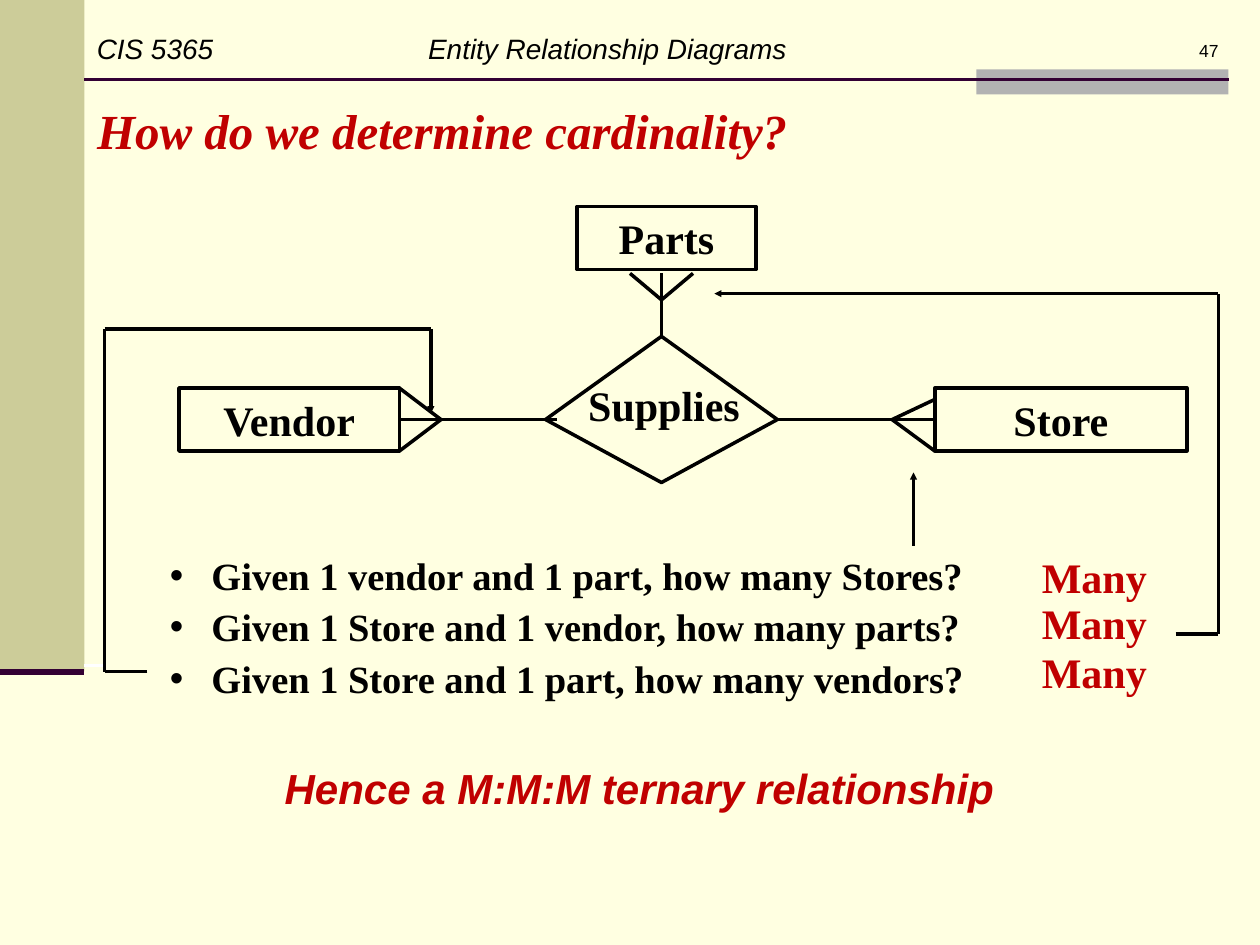
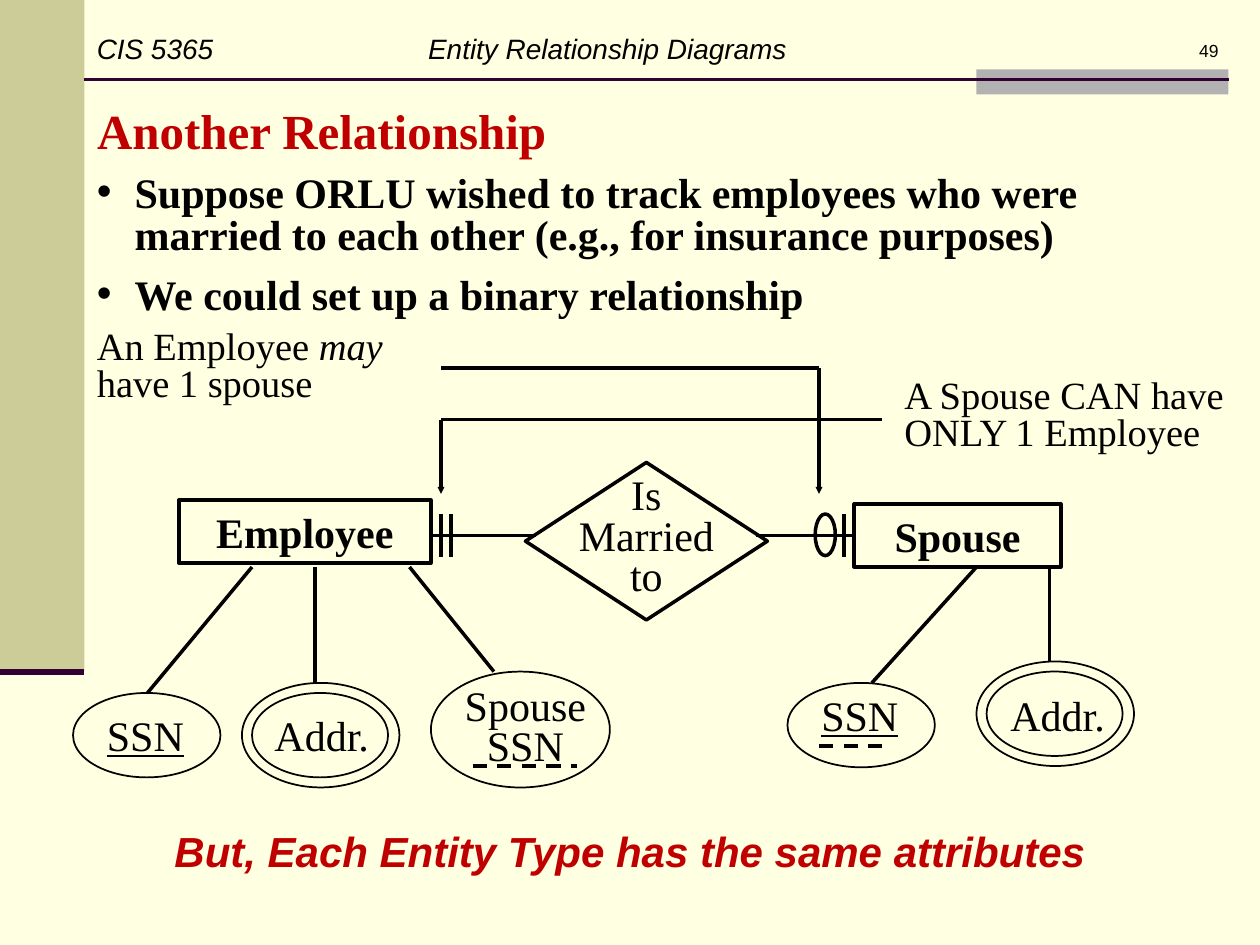
from itertools import pairwise

from lxml.etree import SubElement
from pptx import Presentation
from pptx.dml.color import RGBColor
from pptx.enum.dml import MSO_LINE
from pptx.enum.shapes import MSO_CONNECTOR, MSO_SHAPE
from pptx.enum.text import MSO_ANCHOR, MSO_AUTO_SIZE, PP_ALIGN
from pptx.oxml.ns import qn
from pptx.util import Inches, Pt

BLACK, RED, PLUM, WHITE = "000000", "C00000", "330033", "FFFFFF"
SERIF, SANS = "Times New Roman", "Arial"
ENTITY = {"name": SERIF, "size": Pt(24), "bold": True}
LABEL = {"name": SERIF, "size": Pt(24), "bold": False}
QUESTION = {"name": SERIF, "size": Pt(22), "bold": True}
NOTE = {"name": SERIF, "size": Pt(22)}
TITLE = {"name": SERIF, "size": Pt(28), "bold": True}
HEADER = {"name": SANS, "size": Pt(16), "italic": True}
NUMBER = {"name": SANS, "size": Pt(10)}
CLOSING = {"name": SANS, "size": Pt(24), "bold": True, "italic": True}


def write(box, paragraphs, font, color=BLACK, align=PP_ALIGN.LEFT, spacing=None, indent=0, before=3):
    frame = box.text_frame
    settings = {"word_wrap": True, "auto_size": MSO_AUTO_SIZE.NONE, "vertical_anchor": MSO_ANCHOR.TOP,
                "margin_left": Inches(0.1), "margin_right": Inches(0.1),
                "margin_top": Inches(0.05), "margin_bottom": Inches(0.05)}
    for key, value in settings.items():
        setattr(frame, key, value)
    for index, text in enumerate(paragraphs):
        para = frame.add_paragraph() if index else frame.paragraphs[0]
        layout = {"alignment": align, "line_spacing": spacing, "space_before": Pt(before)}
        for key, value in layout.items():
            setattr(para, key, value)
        if indent:
            props = para._p.get_or_add_pPr()
            props.set("marL", str(Inches(indent)))
            props.set("indent", str(-Inches(indent)))
            SubElement(props, qn("a:buFont"), typeface=SANS)
            SubElement(props, qn("a:buChar"), char="•")
        for position, part in enumerate(text.split("*")):
            span = para.add_run()
            span.text = part
            for key, value in font.items():
                setattr(span.font, key, value)
            if position % 2:
                span.font.italic = True
            span.font.color.rgb = RGBColor.from_string(color)


def draw_line(page, start, end, color=BLACK, width=2, arrow=False, dash=False):
    line = page.shapes.add_connector(MSO_CONNECTOR.STRAIGHT, *map(Inches, start + end))
    line.line.color.rgb = RGBColor.from_string(color)
    line.line.width = Pt(width)
    if dash:
        line.line.dash_style = MSO_LINE.DASH
    if arrow:
        SubElement(line.line._get_or_add_ln(), qn("a:tailEnd"), type="triangle", w="sm", len="sm")
    SubElement(line._element.spPr, qn("a:effectLst"))
    return line


deck = Presentation()
deck.slide_width, deck.slide_height = Inches(10), Inches(7.5)
backdrop = deck.slide_master.background.fill
backdrop.solid()
backdrop.fore_color.rgb = RGBColor.from_string("FFFFE1")

pages = []
for title, number, slanted in [("How do we determine cardinality?", "47", True),
                               ("Another Relationship", "49", False)]:
    page = deck.slides.add_slide(deck.slide_layouts[5])
    pages.append(page)
    for area, color in [((0, 0, 0.67, 5.33), "CCCC99"), ((7.75, 0.55, 2, 0.2), "B2B2B2")]:
        band = page.shapes.add_shape(MSO_SHAPE.RECTANGLE, *map(Inches, area))
        band.shadow.inherit = False
        band.fill.solid()
        band.fill.fore_color.rgb = RGBColor.from_string(color)
        band.line.fill.background()
    draw_line(page, (0.67, 0.63), (9.75, 0.63), PLUM, 1.5)
    draw_line(page, (0, 5.33), (0.67, 5.33), PLUM, 3.5)
    heading = page.shapes.title
    for key, value in {"left": 0.67, "top": 0.75, "width": 9.33, "height": 0.57}.items():
        setattr(heading, key, Inches(value))
    write(heading, [title], TITLE | {"italic": slanted}, RED)
    for area, text, font, align in [((0.67, 0.2, 2.5, 0.4), "CIS 5365", HEADER, PP_ALIGN.LEFT),
                                    ((3.3, 0.2, 4, 0.4), "Entity Relationship Diagrams", HEADER, PP_ALIGN.LEFT),
                                    ((7.69, 0.27, 2.08, 0.5), number, NUMBER, PP_ALIGN.RIGHT)]:
        write(page.shapes.add_textbox(*map(Inches, area)), [text], font, align=align, before=0)

cardinality, marriage = pages

entities = {}
for page, name, area in [(cardinality, "Vendor", (1.42, 3.08, 1.75, 0.5)),
                         (cardinality, "Parts", (4.58, 1.64, 1.42, 0.5)),
                         (cardinality, "Store", (7.42, 3.08, 2, 0.5)),
                         (marriage, "Employee", (1.42, 3.97, 2, 0.5)),
                         (marriage, "Spouse", (6.78, 4, 1.64, 0.5))]:
    box = page.shapes.add_shape(MSO_SHAPE.RECTANGLE, *map(Inches, area))
    box.shadow.inherit = False
    box.fill.background()
    box.line.color.rgb = RGBColor.from_string(BLACK)
    box.line.width = Pt(2)
    write(box, [name], ENTITY, align=PP_ALIGN.CENTER)
    entities[name] = box

left, top, right, bottom = (4.33, 3.33), (5.25, 2.67), (6.17, 3.33), (5.25, 3.83)
builder = cardinality.shapes.build_freeform(*map(Inches, left))
builder.add_line_segments([tuple(map(Inches, point)) for point in (top, right, bottom)], close=True)
supplies = builder.convert_to_shape()
supplies.shadow.inherit = False
supplies.fill.background()
supplies.line.color.rgb = RGBColor.from_string(BLACK)
supplies.line.width = Pt(2)
write(cardinality.shapes.add_textbox(*map(Inches, (4.57, 2.96, 1.43, 0.5))), ["Supplies"], ENTITY)

draw_line(cardinality, (4.42, 3.33), (3.17, 3.33)).end_connect(entities["Vendor"], 3)
draw_line(cardinality, right, (7.42, 3.33)).end_connect(entities["Store"], 1)
draw_line(cardinality, top, (5.25, 2.17))
for tip, toes in [((3.5, 3.33), [(3.17, 3.08), (3.17, 3.58)]),
                  ((5.25, 2.38), [(5, 2.17), (5.5, 2.17)]),
                  ((7.08, 3.33), [(7.42, 3.17), (7.42, 3.58)])]:
    for toe in toes:
        draw_line(cardinality, tip, toe)

draw_line(cardinality, (0.83, 5.28), (0.67, 5.28), WHITE)
for page, route in [(cardinality, [(7.25, 4.33), (7.25, 3.75)]),
                    (cardinality, [(9.33, 5.03), (9.67, 5.03), (9.67, 2.33), (5.67, 2.33)]),
                    (cardinality, [(1.17, 5.33), (0.83, 5.33), (0.83, 2.61), (3.42, 2.61), (3.42, 3.28)]),
                    (marriage, [(3.5, 2.92), (6.5, 2.92), (6.5, 3.92)]),
                    (marriage, [(7, 3.33), (3.5, 3.33), (3.5, 3.92)])]:
    for start, end in pairwise(route):
        draw_line(page, start, end, arrow=end == route[-1])

questions = ["Given 1 vendor and 1 part, how many Stores?",
             "Given 1 Store and 1 vendor, how many parts?",
             "Given 1 Store and 1 part, how many vendors?"]
write(cardinality.shapes.add_textbox(*map(Inches, (1.25, 4.33, 6.75, 1.26))), questions, QUESTION, indent=0.33)
for answer_top in (4.33, 4.69, 5.08):
    answer = cardinality.shapes.add_textbox(*map(Inches, (8.17, answer_top, 1.58, 0.5)))
    write(answer, ["Many"], ENTITY, RED)
write(cardinality.shapes.add_textbox(*map(Inches, (0.81, 6.08, 8.53, 0.42))),
      ["Hence a M:M:M ternary relationship"], CLOSING, RED, PP_ALIGN.CENTER, Pt(23))

points = ["Suppose ORLU wished to track employees who were married to each other (e.g., for insurance purposes)",
          "We could set up a binary relationship"]
for point, area in zip(points, [(0.67, 1.33, 8.67, 0.79), (0.67, 2.14, 8.67, 0.44)]):
    write(marriage.shapes.add_textbox(*map(Inches, area)), [point], ENTITY, spacing=0.85, indent=0.3)

for kind, area, width in [(MSO_SHAPE.DIAMOND, (4.17, 3.67, 1.92, 1.25), 2),
                          (MSO_SHAPE.OVAL, (6.47, 4.08, 0.16, 0.33), 2),
                          (MSO_SHAPE.OVAL, (0.58, 5.5, 1.17, 0.67), 1),
                          (MSO_SHAPE.OVAL, (1.92, 5.42, 1.25, 0.83), 1),
                          (MSO_SHAPE.OVAL, (2, 5.5, 1.08, 0.67), 1),
                          (MSO_SHAPE.OVAL, (3.42, 5.33, 1.42, 0.92), 1),
                          (MSO_SHAPE.OVAL, (6.25, 5.42, 1.17, 0.67), 1),
                          (MSO_SHAPE.OVAL, (7.75, 5.25, 1.25, 0.83), 1),
                          (MSO_SHAPE.OVAL, (7.83, 5.33, 1.08, 0.67), 1)]:
    outline = marriage.shapes.add_shape(kind, *map(Inches, area))
    outline.shadow.inherit = False
    outline.fill.background()
    outline.line.color.rgb = RGBColor.from_string(BLACK)
    outline.line.width = Pt(width)

draw_line(marriage, (6, 4.25), (6.78, 4.25)).end_connect(entities["Spouse"], 1)
draw_line(marriage, (4.25, 4.25), (3.42, 4.25))
for bar in (3.5, 3.58, 6.7):
    draw_line(marriage, (bar, 4.08), (bar, 4.42))
for start, end in [((2, 4.5), (1.17, 5.5)), ((2.5, 4.5), (2.5, 5.42)), ((3.25, 4.5), (3.92, 5.33)),
                   ((7.75, 4.5), (6.92, 5.42)), ((8.33, 4.5), (8.33, 5.25))]:
    draw_line(marriage, start, end)
for start, end in [((3.75, 6.08), (4.58, 6.08)), ((6.5, 5.92), (7.06, 5.92))]:
    draw_line(marriage, start, end, dash=True)

KEY = LABEL | {"underline": True}
for text, area, font in [("SSN", (0.75, 5.58, 1, 0.5), KEY), ("Addr.", (2.08, 5.58, 1, 0.5), LABEL),
                         ("SSN", (6.42, 5.42, 1, 0.5), KEY), ("Addr.", (7.92, 5.42, 1, 0.5), LABEL)]:
    write(marriage.shapes.add_textbox(*map(Inches, area)), [text], font)
for text, area in [("Is Married to", (4.42, 3.75, 1.42, 1.07)), ("Spouse SSN", (3.57, 5.42, 1.2, 0.75))]:
    write(marriage.shapes.add_textbox(*map(Inches, area)), [text], LABEL, align=PP_ALIGN.CENTER, spacing=0.8)
for text, area in [("An Employee *may* have 1 spouse", (0.67, 2.58, 3.08, 0.69)),
                   ("A Spouse CAN have ONLY 1 Employee", (7.08, 2.97, 2.92, 0.69))]:
    write(marriage.shapes.add_textbox(*map(Inches, area)), [text], NOTE, spacing=0.8)
write(marriage.shapes.add_textbox(*map(Inches, (0, 6.5, 10, 0.5))),
      ["But, Each Entity Type has the same attributes"], CLOSING, RED, PP_ALIGN.CENTER)

deck.save("out.pptx")
